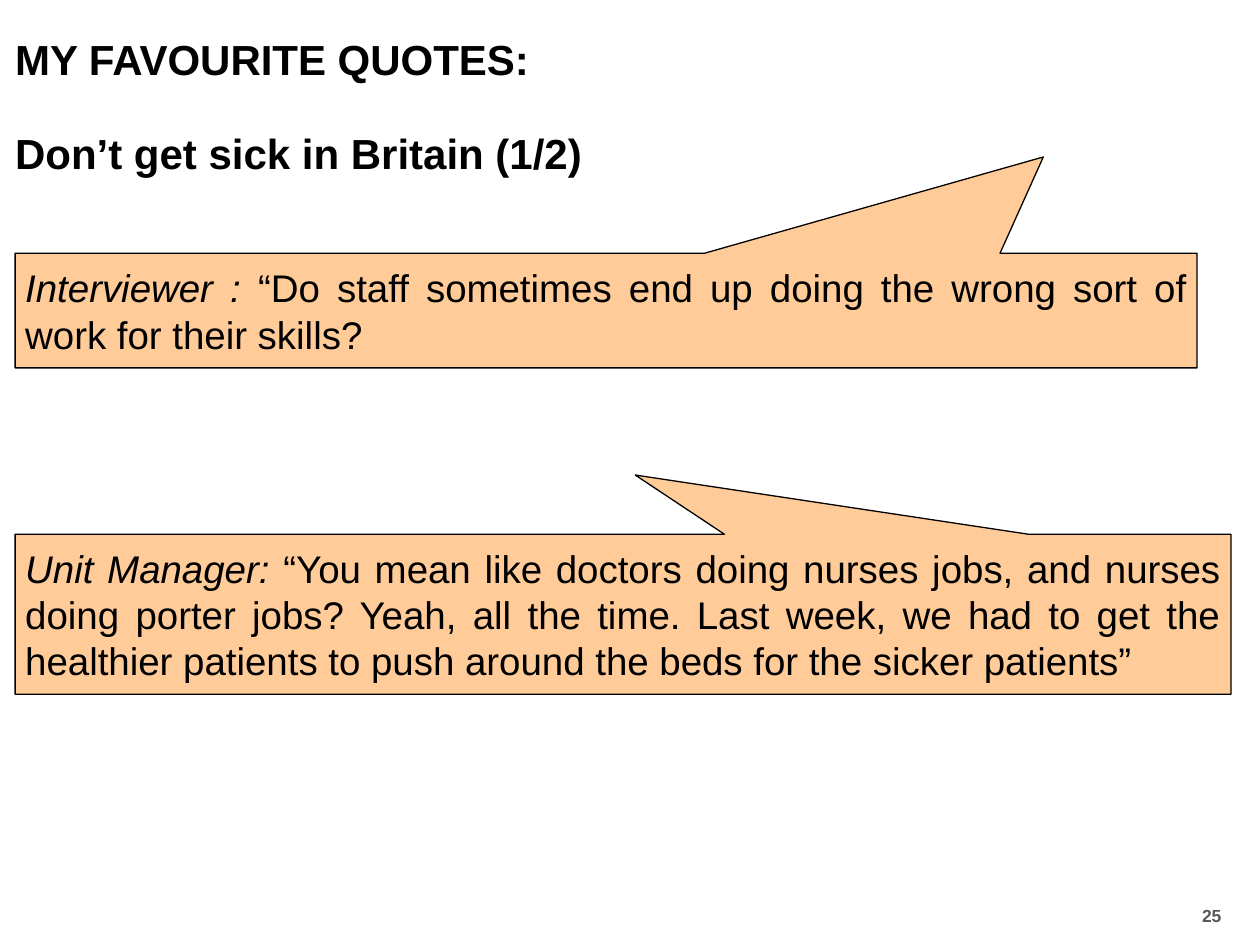
from pptx import Presentation
from pptx import util as u
from pptx.dml import color
from pptx.enum import shapes, text

HUES = {"ink": "000000", "peach": "FFCC99", "grey": "59595A"}
HEAD = {"size": u.Pt(24), "bold": True}
QUOTE = {"size": u.Pt(22), "bold": False}
PAGE = {"size": u.Pt(10), "bold": True}


def hue(name):
    """Return the named colour."""
    return color.RGBColor.from_string(HUES[name])


def apply(obj, form):
    """Set each attribute in form on obj."""
    for key, val in form.items():
        setattr(obj, key, val)


def place(shape, box):
    """Move a shape to a box given in inches."""
    apply(shape, dict(zip(("left", "top", "width", "height"), map(u.Inches, box))))


def inset(frame, sides, **form):
    """Set the margins, in inches, and other values of a text frame."""
    names = ("margin_left", "margin_top", "margin_right", "margin_bottom")
    apply(frame, dict(zip(names, map(u.Inches, sides))))
    apply(frame, {"word_wrap": True, "auto_size": text.MSO_AUTO_SIZE.NONE, **form})


def write(para, words, form, tone="ink", **more):
    """Add a formatted run to a paragraph."""
    run = para.add_run()
    run.text = words
    apply(run.font, {"name": "Arial", **form, **more})
    run.font.color.rgb = hue(tone)


def add_head(shape, box, words):
    """Fill a heading shape with one bold line."""
    place(shape, box)
    frame = shape.text_frame
    inset(frame, (0, 0.05, 0.1, 0.05), vertical_anchor=text.MSO_ANCHOR.MIDDLE)
    para = frame.paragraphs[0]
    para.alignment = text.PP_ALIGN.LEFT
    write(para, words, HEAD)


def add_quote(slide, box, tip, who, words):
    """Draw a speech callout with the speaker in italics."""
    shape = slide.shapes.add_shape(
        shapes.MSO_SHAPE.RECTANGULAR_CALLOUT, *map(u.Inches, box))
    shape.adjustments[0], shape.adjustments[1] = tip
    shape.shadow.inherit = False
    shape.fill.solid()
    shape.fill.fore_color.rgb = hue("peach")
    shape.line.color.rgb = hue("ink")
    shape.line.width = u.Pt(0.75)
    frame = shape.text_frame
    inset(frame, (0.08,) * 4, vertical_anchor=text.MSO_ANCHOR.MIDDLE)
    para = frame.paragraphs[0]
    apply(para, {"alignment": text.PP_ALIGN.JUSTIFY, "space_before": u.Pt(4.4)})
    write(para, who, QUOTE, italic=True)
    write(para, " " + words, QUOTE, italic=False)


def add_page(slide, box, words):
    """Write the page number."""
    frame = slide.shapes.add_textbox(*map(u.Inches, box)).text_frame
    inset(frame, (0,) * 4, word_wrap=False)
    write(frame.paragraphs[0], words, PAGE, "grey")


def main():
    """Build and save the slide."""
    deck = Presentation()
    apply(deck, {"slide_width": u.Inches(10), "slide_height": u.Inches(7.5)})
    slide = deck.slides.add_slide(deck.slide_layouts[5])
    left = 0.12
    add_page(slide, (9.54, 7.18, 0.22, 0.17), "25")
    add_quote(slide, (left, 2.01, 9.38, 0.91), (0.37, -1.34), "Interviewer :",
              "“Do staff sometimes end up doing the wrong sort of work for their skills?")
    add_quote(slide, (left, 4.24, 9.65, 1.27), (0.01, -0.87), "Unit Manager:",
              "“You mean like doctors doing nurses jobs, and nurses doing porter jobs? "
              "Yeah, all the time. Last week, we had to get the healthier patients "
              "to push around the beds for the sicker patients”")
    sub = (left, 0.96, 7.33, 0.51)
    add_head(slide.shapes.add_textbox(*map(u.Inches, sub)), sub,
             "Don’t get sick in Britain (1/2)")
    add_head(slide.shapes.title, (left, 0.21, 10.08, 0.51), "MY FAVOURITE QUOTES:")
    deck.save("out.pptx")


if __name__ == "__main__":
    main()
